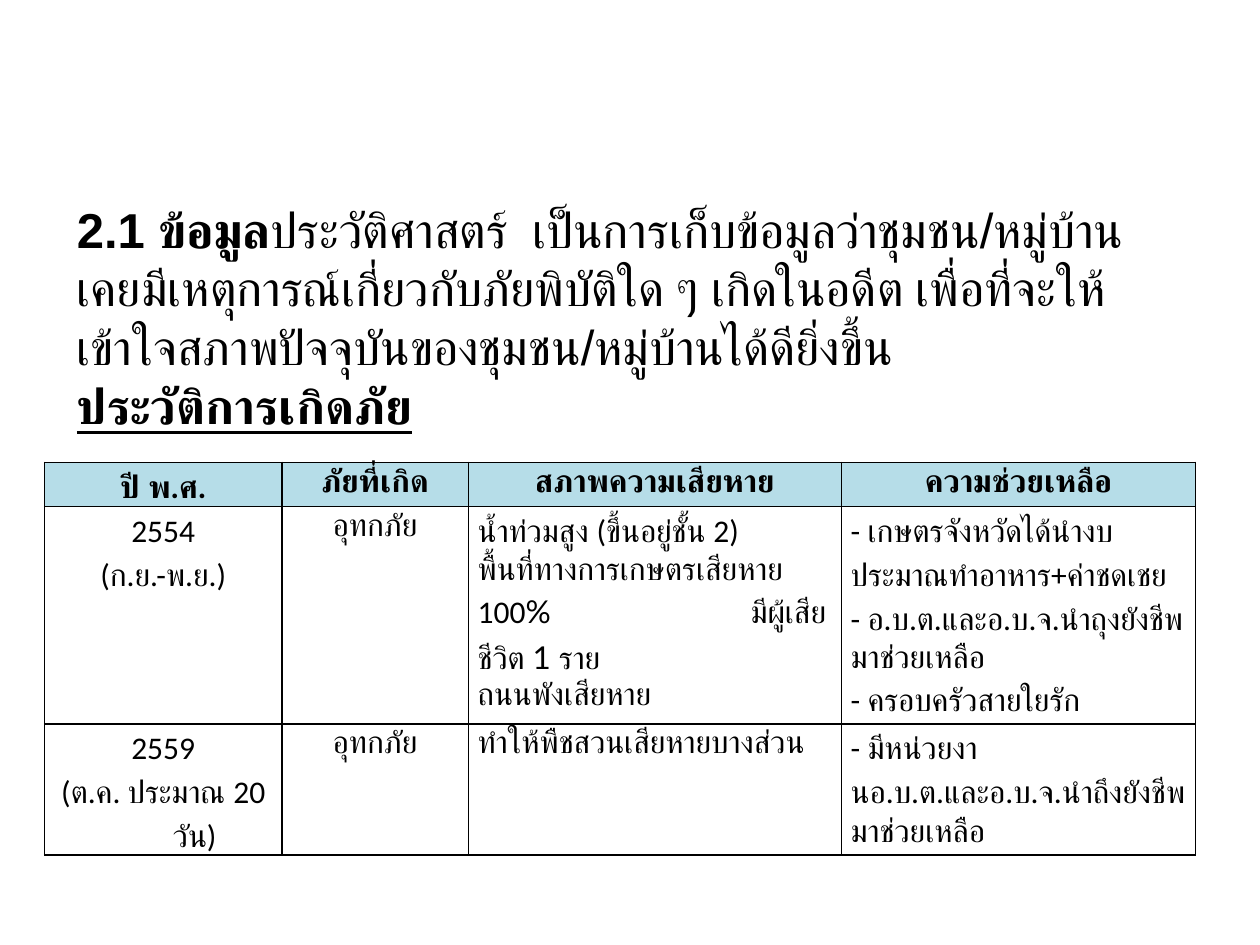
from lxml import etree
from pptx import Presentation
from pptx.dml.color import RGBColor
from pptx.enum.text import MSO_ANCHOR, PP_ALIGN
from pptx.oxml.ns import qn
from pptx.util import Cm, Pt

CENTER, LEFT = PP_ALIGN.CENTER, PP_ALIGN.LEFT
TOP = MSO_ANCHOR.TOP
BLACK, HEADER_FILL = "000000", "B6DDE8"
HANGING = 1.27  # cm
COLUMN_WIDTHS = [4.78, 3.76, 7.52, 7.14]
ROW_HEIGHTS = [0.89, 4.37, 2.64]

# Each cell is a list of paragraphs; a paragraph is a list of (text, font) runs or a string
HEADERS = ["ปี พ.ศ.", "ภัยที่เกิด", "สภาพความเสียหาย", "ความช่วยเหลือ"]
EVENTS = [
    [
        ["2554", "(ก.ย.-พ.ย.)"],
        ["อุทกภัย"],
        [
            "น้ำท่วมสูง (ขึ้นอยู่ชั้น 2)",
            [("พื้นที่ทางการเกษตรเสียหาย 100", "Calibri"),
             ("%\tมีผู้เสียชีวิต 1 ราย", "Lato")],
            "ถนนพังเสียหาย",
        ],
        [
            "- เกษตรจังหวัดได้นำงบประมาณทำอาหาร+ค่าชดเชย",
            "- อ.บ.ต.และอ.บ.จ.นำถุงยังชีพมาช่วยเหลือ",
            "- ครอบครัวสายใยรัก",
        ],
    ],
    [
        ["2559", "(ต.ค. ประมาณ 20 วัน)"],
        ["อุทกภัย"],
        ["ทำให้พืชสวนเสียหายบางส่วน"],
        ["- มีหน่วยงานอ.บ.ต.และอ.บ.จ.นำถึงยังชีพมาช่วยเหลือ"],
    ],
]


def color(value):
    return RGBColor.from_string(value)


def style_font(font, name, size, bold=False):
    font.name, font.size, font.bold = name, Pt(size), bold
    font.color.rgb = color(BLACK)


def next_paragraph(frame, index):
    return frame.paragraphs[0] if index == 0 else frame.add_paragraph()


def add_tab_stop(paragraph, position):
    properties = paragraph._p.get_or_add_pPr()
    tabs = etree.Element(qn("a:tabLst"))
    etree.SubElement(tabs, qn("a:tab"), pos=str(Cm(position)), algn="l")
    properties.find(qn("a:defRPr")).addprevious(tabs)


def set_borders(cell):
    properties = cell._tc.get_or_add_tcPr()
    for index, side in enumerate(("lnL", "lnR", "lnT", "lnB")):
        line = etree.Element(qn(f"a:{side}"), w=str(Pt(1)))
        fill = etree.SubElement(line, qn("a:solidFill"))
        etree.SubElement(fill, qn("a:srgbClr"), val=BLACK)
        properties.insert(index, line)


def fill_cell(cell, paragraphs, align, bold=False, hanging=False, fill=None):
    cell.margin_left = cell.margin_right = Cm(0.19)
    cell.margin_top = cell.margin_bottom = 0
    cell.vertical_anchor = TOP
    if fill:
        cell.fill.solid()
        cell.fill.fore_color.rgb = color(fill)
    else:
        cell.fill.background()
    set_borders(cell)
    for index, content in enumerate(paragraphs):
        paragraph = next_paragraph(cell.text_frame, index)
        paragraph.alignment = align
        paragraph.line_spacing = 1.15
        style_font(paragraph.font, "Calibri", 18, bold)
        if hanging:
            properties = paragraph._p.get_or_add_pPr()
            properties.set("marL", str(Cm(HANGING)))
            properties.set("indent", str(-Cm(HANGING)))
        if isinstance(content, str):
            paragraph.add_run().text = content
            continue
        add_tab_stop(paragraph, 5.5)
        for text, font_name in content:
            run = paragraph.add_run()
            run.text = text
            run.font.name = font_name


def add_introduction(slide, left, top, width, height):
    box = slide.shapes.add_textbox(Cm(left), Cm(top), Cm(width), Cm(height))
    frame = box.text_frame
    frame.word_wrap = True
    # Numbered lead-in followed by the explanation
    introduction = next_paragraph(frame, 0)
    style_font(introduction.font, "Arial", 28)
    lead = introduction.add_run()
    lead.text = "2.1 ข้อมูล"
    lead.font.bold = True
    introduction.add_run().text = (
        "ประวัติศาสตร์  เป็นการเก็บข้อมูลว่าชุมชน/หมู่บ้าน"
        "เคยมีเหตุการณ์เกี่ยวกับภัยพิบัติใด ๆ เกิดในอดีต "
        "เพื่อที่จะให้เข้าใจสภาพปัจจุบันของชุมชน/หมู่บ้านได้ดียิ่งขึ้น"
    )
    # Table heading
    heading = next_paragraph(frame, 1)
    style_font(heading.font, "Arial", 28, bold=True)
    heading.font.underline = True
    heading.add_run().text = "ประวัติการเกิดภัย"


def add_history_table(slide, left, top):
    table = slide.shapes.add_table(
        len(ROW_HEIGHTS), len(COLUMN_WIDTHS), Cm(left), Cm(top),
        Cm(sum(COLUMN_WIDTHS)), Cm(sum(ROW_HEIGHTS)),
    ).table
    table.horz_banding = False
    for column, width in zip(table.columns, COLUMN_WIDTHS):
        column.width = Cm(width)
    for row, height in zip(table.rows, ROW_HEIGHTS):
        row.height = Cm(height)
    # Header row
    for column, header in enumerate(HEADERS):
        fill_cell(table.cell(0, column), [header], CENTER, bold=True, fill=HEADER_FILL)
    # One row per disaster
    for row, event in enumerate(EVENTS, start=1):
        for column, paragraphs in enumerate(event):
            fill_cell(table.cell(row, column), paragraphs,
                      CENTER if column < 2 else LEFT,
                      hanging=(row == 2 and column == 0))


def main():
    presentation = Presentation()
    presentation.slide_width, presentation.slide_height = Cm(25.4), Cm(19.05)
    slide = presentation.slides.add_slide(presentation.slide_layouts[6])
    add_introduction(slide, 1.3, 3.89, 22.4, 5.05)
    add_history_table(slide, 0.9, 9.32)
    presentation.save("out.pptx")


if __name__ == "__main__":
    main()
